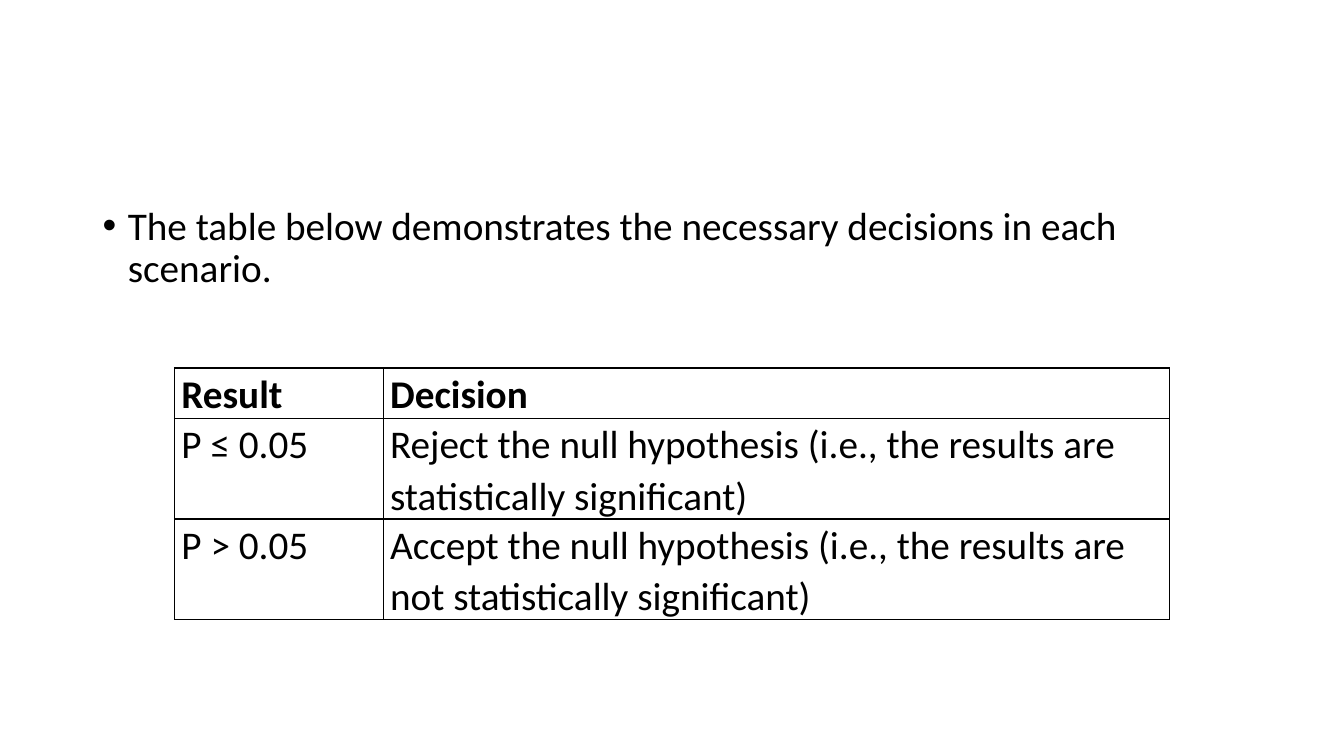
"""Build a slide that tabulates the decision for each P value result."""
from lxml import etree
from pptx import Presentation
from pptx import util as u
from pptx.dml.color import RGBColor
from pptx.oxml.ns import qn

COLORS = {"ink": "000000"}
FONT = {"name": "Calibri", "size": u.Pt(28)}
INTRO = "The table below demonstrates the necessary decisions in each scenario."
DECISIONS = [
    ("Result", "Decision"),
    ("P ≤ 0.05", "Reject the null hypothesis (i.e., the results are statistically significant)"),
    ("P > 0.05", "Accept the null hypothesis (i.e., the results are not statistically significant)"),
]
INTRO_BOX = (0.92, 2, 11.5, 1.26)
TABLE_CORNER = (1.73, 3.65)
COLUMN_WIDTHS = (2.07, 7.8)
ROW_HEIGHT = 0.27
CELL_MARGINS = {"margin_left": 0.07, "margin_right": 0.07, "margin_top": 0, "margin_bottom": 0}
BORDER_POINTS = 1


def write(para, words, spacing, bold=False):
    para.line_spacing = spacing
    span = para.add_run()
    span.text = words
    for name, value in {**FONT, "bold": bold}.items():
        setattr(span.font, name, value)
    span.font.color.rgb = RGBColor.from_string(COLORS["ink"])


def add_intro(page):
    box = page.shapes.add_textbox(*map(u.Inches, INTRO_BOX))
    box.text_frame.word_wrap = True
    para = box.text_frame.paragraphs[0]
    properties = para._p.get_or_add_pPr()
    properties.set("marL", str(u.Inches(0.25)))
    properties.set("indent", str(u.Inches(-0.25)))
    etree.SubElement(properties, qn("a:buFont"), typeface="Arial")
    etree.SubElement(properties, qn("a:buChar"), char="•")
    write(para, INTRO, 0.9)


def add_borders(cell):
    properties = cell._tc.get_or_add_tcPr()
    for side in ("lnL", "lnR", "lnT", "lnB"):
        line = etree.SubElement(properties, qn(f"a:{side}"), w=str(u.Pt(BORDER_POINTS)))
        fill = etree.SubElement(line, qn("a:solidFill"))
        etree.SubElement(fill, qn("a:srgbClr"), val=COLORS["ink"])


def add_decisions(page):
    size = (sum(COLUMN_WIDTHS), ROW_HEIGHT * len(DECISIONS))
    frame = page.shapes.add_table(
        len(DECISIONS), len(COLUMN_WIDTHS), *map(u.Inches, TABLE_CORNER + size))
    table = frame.table
    table.first_row = table.horz_banding = False
    for column, width in zip(table.columns, COLUMN_WIDTHS):
        column.width = u.Inches(width)
    for row, entries in enumerate(DECISIONS):
        for column, words in enumerate(entries):
            cell = table.cell(row, column)
            for name, inches in CELL_MARGINS.items():
                setattr(cell, name, u.Inches(inches))
            add_borders(cell)
            cell.fill.background()
            write(cell.text_frame.paragraphs[0], words, 1.07, bold=row == 0)


def main():
    deck = Presentation()
    deck.slide_width, deck.slide_height = u.Inches(13.33), u.Inches(7.5)
    page = deck.slides.add_slide(deck.slide_layouts[6])
    add_intro(page)
    add_decisions(page)
    deck.save("out.pptx")


if __name__ == "__main__":
    main()
